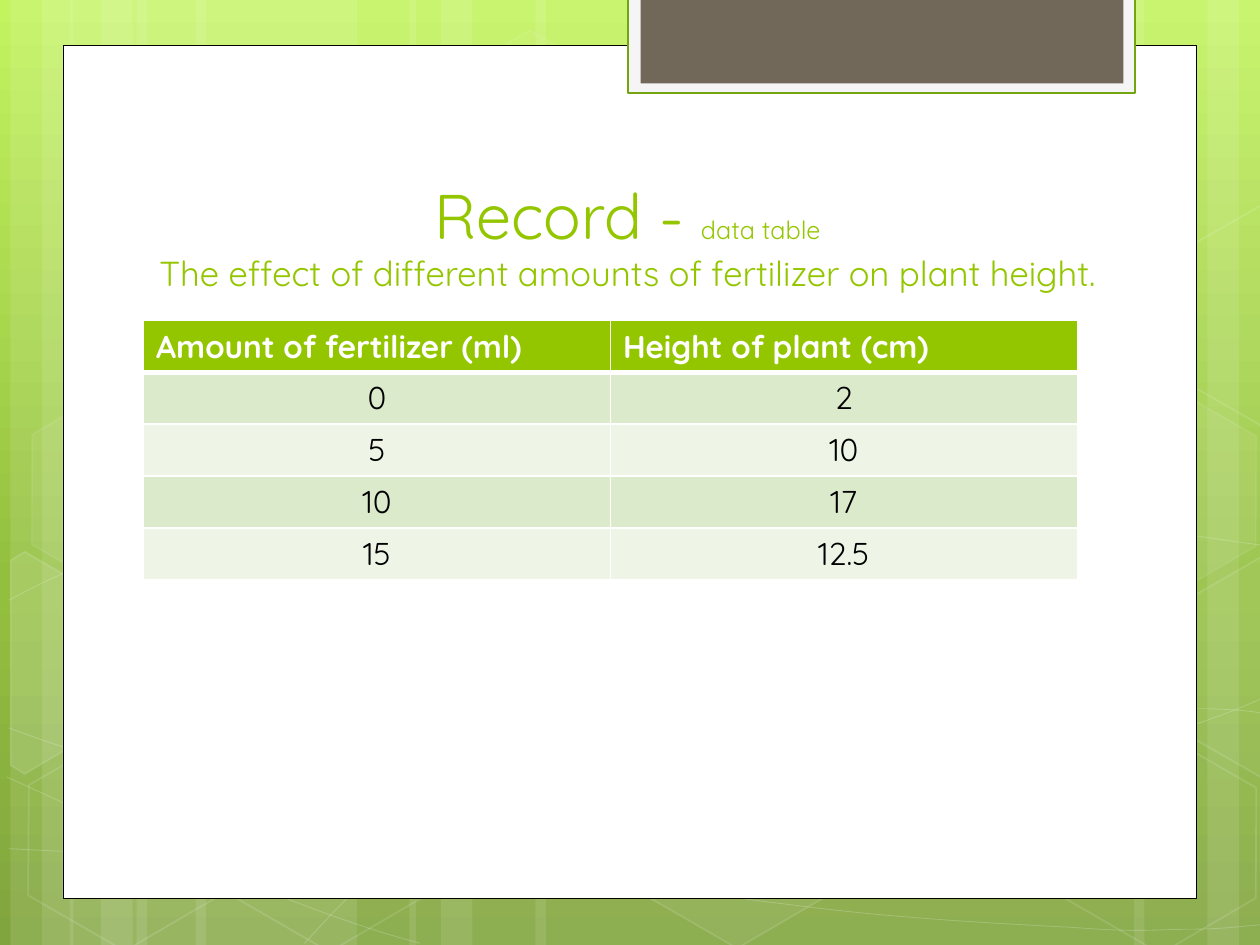
from copy import deepcopy
from dataclasses import dataclass
from math import cos, radians, sin

from pptx import Presentation
from pptx.dml.color import RGBColor
from pptx.enum.shapes import MSO_SHAPE
from pptx.enum.text import MSO_ANCHOR, PP_ALIGN
from pptx.oxml.ns import qn
from pptx.oxml.xmlchemy import OxmlElement
from pptx.util import Pt

WHITE = RGBColor(0xFF, 0xFF, 0xFF)
BLACK = RGBColor(0x00, 0x00, 0x00)
LIME = RGBColor(0x94, 0xC6, 0x00)
MOSS = RGBColor(0x74, 0xA5, 0x10)
SMOKE = RGBColor(0xF5, 0xF5, 0xF5)
BROWN = RGBColor(0x71, 0x68, 0x5A)
BANDS = (RGBColor(0xDC, 0xEA, 0xCC), RGBColor(0xEE, 0xF5, 0xE7))
SKY = ((0, RGBColor(0xC3, 0xF3, 0x5F)), (0.62, RGBColor(0x93, 0xBF, 0x3F)),
       (1, RGBColor(0x81, 0xA5, 0x3E)))
FONT = "Quicksand"
WIDE, HIGH = 720, 540
TILT = 30


@dataclass
class Look:
    """Fill and line; the two opacities are in percent."""
    fill: RGBColor | None = None
    line: RGBColor | None = None
    width: float = 1
    fill_pct: int = 100
    line_pct: int = 100


@dataclass
class Hex:
    left: float
    top: float
    fill_pct: int = 0
    line_pct: int = 12


@dataclass
class Cut:
    """A hexagon cut off by the slide edge, turned about its centre."""
    points: list
    centre: tuple
    fill_pct: int = 0


@dataclass
class Panel:
    left: float
    top: float
    width: float
    height: float
    look: Look


# Stripes as (left, width); the left trio shows twice, one step apart
TRIO = [(78, 126), (6, 36), (24, 60)]
STEP = 33.8
STRIPES = TRIO + [(x + STEP, w) for x, w in TRIO] + [
    (528, 126), (690, 36), (648, 60), (306, 222), (234, 36), (252, 60)]

# Each curve is a start point followed by groups of three Bezier points
CURVES = [
    [(5, 485), (44, 487), (83, 489), (137, 488), (191, 487), (258, 486), (330, 479),
     (402, 472), (504, 458), (570, 444), (636, 431), (703, 409), (725, 397)],
    [(5, 343), (26, 332), (47, 321), (87, 310), (128, 300), (186, 284), (250, 279),
     (314, 274), (392, 273), (471, 279), (550, 284), (682, 307), (725, 312)],
    [(4, 444), (91, 484), (178, 523), (240, 539)],
    [(5, 416), (27, 424), (50, 432), (92, 444), (134, 454), (197, 472), (257, 485),
     (317, 497), (392, 510), (452, 517), (512, 525), (576, 528), (614, 530),
     (652, 533), (662, 531), (680, 531), (699, 531), (712, 529), (725, 528)],
    [(174, 539), (187, 525), (200, 510), (217, 498), (235, 485), (259, 470), (279, 460),
     (300, 450), (312, 446), (338, 438), (364, 431), (413, 421), (438, 416),
     (464, 411), (467, 411), (490, 410), (512, 408), (547, 405), (572, 405),
     (597, 404), (638, 405), (638, 405), (654, 405), (670, 405), (686, 405),
     (699, 405), (711, 406), (718, 407), (724, 408), (722, 407), (724, 408)],
]

HEXES = [Hex(240, 26, 4, 8), Hex(358, 424, 6), Hex(8, 425.5), Hex(10, 225, 7, 8),
         Hex(125, 426), Hex(542, 326, 10), Hex(600, 427), Hex(600, 226, 7, 8)]

LEFT_CUT = [(6, 320), (14, 315), (69, 347), (68, 410), (14, 442), (6, 437)]
RIGHT_CUT = [(667, 349), (721, 318), (726, 321), (726, 441), (721, 444), (667, 413)]
RISE = 201
CUTS = [Cut(LEFT_CUT, (26, 385), 10), Cut(RIGHT_CUT, (709, 374.5), 4),
        Cut([(x, y - RISE) for x, y in RIGHT_CUT], (709, 374.5 - RISE))]

PANELS = [
    Panel(36, 25.9, 648, 487.3, Look(WHITE, BLACK, 0.5)),
    Panel(359, -1.4, 289.7, 54.7, Look(SMOKE, MOSS, 1.25)),
    Panel(366, -1.4, 276, 49, Look(BROWN)),
]

ROWS = [("Amount of fertilizer (ml)", "Height of plant (cm)"),
        ("0", "2"), ("5", "10"), ("10", "17"), ("15", "12.5")]


def fade(parent, pct: int) -> None:
    """Give the solid fill directly inside parent an opacity."""
    if pct < 100:
        alpha = OxmlElement("a:alpha")
        alpha.set("val", str(pct * 1000))
        parent.find(qn("a:solidFill")).find(qn("a:srgbClr")).append(alpha)


def paint(shape, look: Look) -> None:
    shape.shadow.inherit = False
    props = shape.element.spPr
    if look.fill is None or look.fill_pct == 0:
        shape.fill.background()
    else:
        shape.fill.solid()
        shape.fill.fore_color.rgb = look.fill
        fade(props, look.fill_pct)
    if look.line is None:
        shape.line.fill.background()
    else:
        shape.line.color.rgb = look.line
        shape.line.width = Pt(look.width)
        fade(props.find(qn("a:ln")), look.line_pct)


def add_box(slide, kind, left: float, top: float, width: float, height: float, look: Look):
    shape = slide.shapes.add_shape(kind, Pt(left), Pt(top), Pt(width), Pt(height))
    paint(shape, look)
    return shape


def add_free(slide, points: list, look: Look, close: bool):
    spots = [(Pt(x), Pt(y)) for x, y in points]
    pen = slide.shapes.build_freeform(*spots[0])
    pen.add_line_segments(spots[1:], close=close)
    shape = pen.convert_to_shape()
    paint(shape, look)
    return shape


def bend(shape) -> None:
    """Join each three line segments into one Bezier curve."""
    lines = list(shape.element.iter(qn("a:lnTo")))
    for at in range(0, len(lines), 3):
        curve = OxmlElement("a:cubicBezTo")
        lines[at].addprevious(curve)
        for line in lines[at:at + 3]:
            curve.append(line[0])
            line.getparent().remove(line)


def turn(points: list, centre: tuple, angle: float) -> list:
    a, (cx, cy) = radians(angle), centre
    return [(cx + (x - cx) * cos(a) - (y - cy) * sin(a),
             cy + (x - cx) * sin(a) + (y - cy) * cos(a)) for x, y in points]


def add_text(para, text: str, *, size: float, color: RGBColor, bold: bool = False,
             align=PP_ALIGN.LEFT) -> None:
    para.alignment = align
    run = para.add_run()
    run.text = text
    run.font.name = FONT
    run.font.size = Pt(size)
    run.font.bold = bold
    run.font.color.rgb = color


def edge(cell, base: float) -> None:
    """Draw white borders, the bottom one at its own width."""
    props = cell._tc.get_or_add_tcPr()
    for spot, (side, width) in enumerate(zip("LRTB", (1, 1, 1, base))):
        line = OxmlElement(f"a:ln{side}")
        line.set("w", str(Pt(width)))
        fill = OxmlElement("a:solidFill")
        color = OxmlElement("a:srgbClr")
        color.set("val", str(WHITE))
        fill.append(color)
        line.append(fill)
        props.insert(spot, line)


def add_sky(slide) -> None:
    fill = slide.background.fill
    fill.gradient()
    fill.gradient_angle = 270
    stops = slide.element.find(".//" + qn("a:gsLst"))
    stops.append(deepcopy(stops[-1]))
    for stop, (place, color) in zip(fill.gradient_stops, SKY):
        stop.position = place
        stop.color.rgb = color


def add_title(slide) -> None:
    frame = slide.shapes.add_textbox(Pt(82), Pt(80.6), Pt(553), Pt(90)).text_frame
    frame.word_wrap = True
    frame.vertical_anchor = MSO_ANCHOR.BOTTOM
    frame.margin_bottom = Pt(3)
    para = frame.paragraphs[0]
    style = dict(color=LIME, align=PP_ALIGN.CENTER)
    add_text(para, "Record - ", size=36, **style)
    add_text(para, "data table", size=14.4, **style)
    para.add_line_break()
    add_text(para, "The effect of different amounts of fertilizer on plant height.",
             size=19.8, **style)


def add_grid(slide) -> None:
    table = slide.shapes.add_table(len(ROWS), 2, Pt(82), Pt(183), Pt(533.6), Pt(148.5)).table
    for row, texts in enumerate(ROWS):
        head = row == 0
        for col, text in enumerate(texts):
            cell = table.cell(row, col)
            cell.fill.solid()
            cell.fill.fore_color.rgb = LIME if head else BANDS[(row - 1) % 2]
            edge(cell, 3 if head else 1)
            add_text(cell.text_frame.paragraphs[0], text, size=18, bold=head,
                     color=WHITE if head else BLACK,
                     align=PP_ALIGN.LEFT if head else PP_ALIGN.CENTER)


def add_decor(slide) -> None:
    for left, width in STRIPES:
        add_box(slide, MSO_SHAPE.RECTANGLE, left, 0, width, HIGH, Look(WHITE, fill_pct=10))
    for curve in CURVES:
        bend(add_free(slide, curve, Look(None, WHITE, 0.5, line_pct=20), False))
    for item in HEXES:
        look = Look(WHITE, WHITE, 1, item.fill_pct, item.line_pct)
        shape = add_box(slide, MSO_SHAPE.HEXAGON, item.left, item.top, 126, 109.4, look)
        shape.adjustments[0] = 0.285
        shape.rotation = TILT
    for cut in CUTS:
        points = turn(cut.points, cut.centre, -TILT)
        look = Look(WHITE, WHITE, 1, cut.fill_pct, 12)
        add_free(slide, points, look, True).rotation = TILT


def main() -> None:
    deck = Presentation()
    deck.slide_width, deck.slide_height = Pt(WIDE), Pt(HIGH)
    slide = deck.slides.add_slide(deck.slide_layouts[6])

    # Backdrop
    add_sky(slide)
    add_decor(slide)

    # Page and tab
    for item in PANELS:
        add_box(slide, MSO_SHAPE.RECTANGLE, item.left, item.top, item.width, item.height,
                item.look)

    # Content
    add_title(slide)
    add_grid(slide)
    deck.save("out.pptx")


if __name__ == "__main__":
    main()
